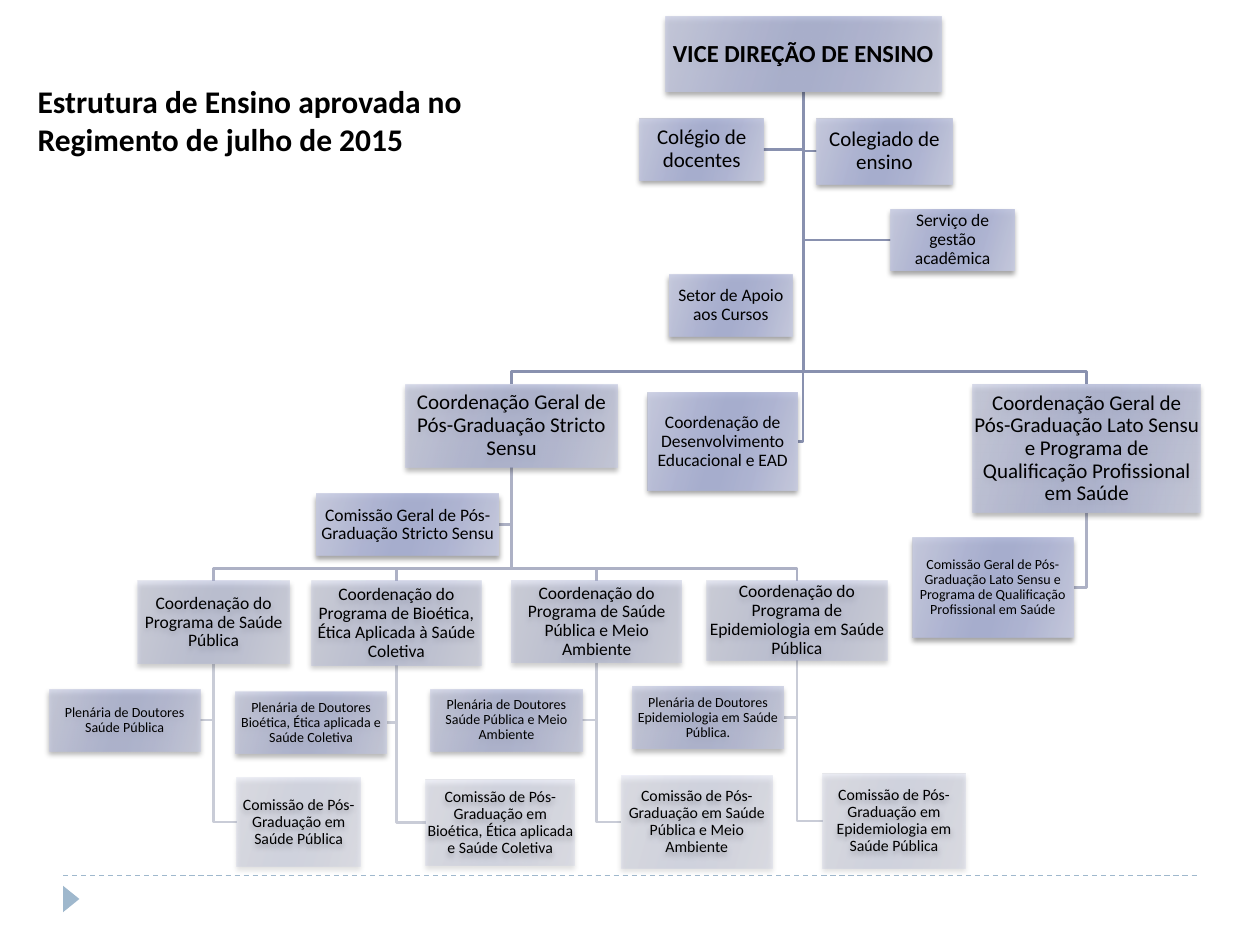
from dataclasses import dataclass
from lxml import etree
from pptx import Presentation, util as u
from pptx.dml.color import RGBColor
from pptx.enum import dml, shapes, text
from pptx.oxml.ns import qn


@dataclass(frozen=True)
class Role:
    opacity: int
    size: int
    link: str = ""  # colour of the lines to the units below
    bold: bool = False
    below: bool = False  # hangs from its parent by the top edge


class Theme:
    font, ink, accent = "Calibri", "000000", "9FB8CD"
    title_size = 18
    gradient = [(0, "C9CDE2"), (30, "B1B7D7"), (45, "A8B0D3"),
                (55, "A8B0D3"), (73, "B1B7D7"), (100, "C9CDE2")]
    root = Role(80, 14, link="8991AF", bold=True)
    general = Role(70, 12, link="ADB1C5", below=True)
    program = Role(50, 10, link="C9CCD7", below=True)
    plenary = Role(70, 8)
    committee = Role(30, 9)
    council = Role(90, 12)
    staff = Role(90, 10)
    small_staff = Role(90, 8)


@dataclass
class Unit:
    name: str
    role: Role
    at: tuple
    parent: "Unit" = None

    @property
    def center_x(self):
        return self.at[0] + self.at[2] / 2


class Chart:
    def __init__(self, slide, theme):
        self.s, self.theme = slide, theme

    def set_text(self, sp, words, size, bold):
        tf = sp.text_frame
        tf.word_wrap = True
        p = tf.paragraphs[0]
        p.text = words
        p.font.name, p.font.size, p.font.bold = self.theme.font, u.Pt(size), bold
        p.font.color.rgb = RGBColor.from_string(self.theme.ink)
        return tf, p

    def title(self, words, at):
        sp = self.s.shapes.add_textbox(*map(u.Inches, at))
        self.set_text(sp, words, self.theme.title_size, True)

    def divider(self, x1, x2, y):
        line = self.s.shapes.add_connector(
            shapes.MSO_CONNECTOR.STRAIGHT, *map(u.Inches, (x1, y, x2, y)))
        line.line.color.rgb = RGBColor.from_string(self.theme.accent)
        line.line.width = u.Pt(0.75)
        line.line.dash_style = dml.MSO_LINE.DASH
        etree.SubElement(line._element.spPr, qn("a:effectLst"))

    def marker(self, at):
        sp = self.s.shapes.add_shape(
            shapes.MSO_SHAPE.ISOSCELES_TRIANGLE, *map(u.Inches, at))
        sp.rotation = 90
        sp.fill.solid()
        sp.fill.fore_color.rgb = RGBColor.from_string(self.theme.accent)
        sp.line.fill.background()
        sp.shadow.inherit = False

    def link(self, unit):
        """Draw the elbow from the parent's bottom to the unit's top or near side."""
        parent = unit.parent
        x, y = parent.center_x, parent.at[1] + parent.at[3]
        left, top, width, height = unit.at
        if unit.role.below:
            bend = top - 0.1
            points = [(x, bend), (unit.center_x, bend), (unit.center_x, top)]
        else:
            middle = top + height / 2
            side = left + width if unit.center_x < x else left
            points = [(x, middle), (side, middle)]
        elbow = self.s.shapes.build_freeform(u.Inches(x), u.Inches(y))
        elbow.add_line_segments(
            [(u.Inches(a), u.Inches(b)) for a, b in points], close=False)
        sp = elbow.convert_to_shape()
        sp.fill.background()
        sp.line.color.rgb = RGBColor.from_string(parent.role.link)
        sp.line.width = u.Pt(1.5)
        sp.shadow.inherit = False

    def box(self, unit):
        sp = self.s.shapes.add_shape(
            shapes.MSO_SHAPE.RECTANGLE, *map(u.Inches, unit.at))
        self.shade(sp, unit.role.opacity)
        sp.line.fill.background()
        self.cast_shadow(sp)
        tf, p = self.set_text(sp, unit.name, unit.role.size, unit.role.bold)
        tf.margin_left = tf.margin_right = u.Inches(0.01)
        tf.margin_top = tf.margin_bottom = u.Inches(0.01)
        tf.vertical_anchor = text.MSO_ANCHOR.MIDDLE
        p.alignment = text.PP_ALIGN.CENTER
        p.line_spacing = 0.9

    @staticmethod
    def color(parent, rgb, opacity):
        clr = etree.SubElement(parent, qn("a:srgbClr"), val=rgb)
        etree.SubElement(clr, qn("a:alpha"), val=str(opacity * 1000))

    def shade(self, sp, opacity):
        sp.fill.gradient()
        sp.fill.gradient_angle = 360 - 16
        stops = sp._element.spPr.find(".//" + qn("a:gsLst"))
        for stop in list(stops):
            stops.remove(stop)
        for pos, rgb in self.theme.gradient:
            stop = etree.SubElement(stops, qn("a:gs"), pos=str(pos * 1000))
            self.color(stop, rgb, opacity)

    def cast_shadow(self, sp):
        sp.shadow.inherit = False
        effects = sp._element.spPr.find(qn("a:effectLst"))
        shadow = etree.SubElement(
            effects, qn("a:outerShdw"), blurRad=str(u.Pt(3)), dist=str(u.Pt(2)),
            dir=str(90 * 60000), rotWithShape="0")
        self.color(shadow, self.theme.ink, 40)


def build_units(t):
    root = Unit("VICE DIREÇÃO DE ENSINO", t.root, (5.28, 0.13, 2.19, 0.6))
    stricto = Unit("Coordenação Geral de Pós-Graduação Stricto Sensu",
                   t.general, (3.22, 3.05, 1.68, 0.66), root)
    lato = Unit("Coordenação Geral de Pós-Graduação Lato Sensu e Programa de "
                "Qualificação Profissional em Saúde",
                t.general, (7.72, 3.05, 1.81, 1.02), root)
    units = [
        root, stricto, lato,
        Unit("Colégio de docentes", t.council, (5.08, 0.94, 0.98, 0.49), root),
        Unit("Colegiado de ensino", t.council, (6.48, 0.94, 1.08, 0.52), root),
        Unit("Serviço de gestão acadêmica", t.staff, (7.07, 1.66, 0.98, 0.49), root),
        Unit("Setor de Apoio aos Cursos", t.staff, (5.31, 2.18, 0.98, 0.49)),
        Unit("Coordenação de Desenvolvimento Educacional e EAD",
             t.staff, (5.14, 3.12, 1.19, 0.77), root),
        Unit("Comissão Geral de Pós-Graduação Stricto Sensu",
             t.staff, (2.51, 3.92, 1.45, 0.49), stricto),
        Unit("Comissão Geral de Pós-Graduação Lato Sensu e Programa de "
             "Qualificação Profissional em Saúde",
             t.small_staff, (7.24, 4.27, 1.28, 0.79), lato),
    ]
    # program, plenary and committee: subject as worded in each, then places
    programs = [
        ("de Saúde Pública", "Saúde Pública", "Saúde Pública",
         (1.09, 1.21, 0.66), (0.39, 5.47), (1.88, 6.17, 0.98, 0.71)),
        ("de Bioética, Ética Aplicada à Saúde Coletiva",
         "Bioética, Ética aplicada e Saúde Coletiva",
         "Bioética, Ética aplicada e Saúde Coletiva",
         (2.47, 1.35, 0.67), (1.87, 5.49), (3.38, 6.19, 1.18, 0.68)),
        ("de Saúde Pública e Meio Ambiente", "Saúde Pública e Meio Ambiente",
         "Saúde Pública e Meio Ambiente",
         (4.06, 1.35, 0.65), (3.42, 5.47), (4.93, 6.16, 1.2, 0.73)),
        ("de Epidemiologia em Saúde Pública", "Epidemiologia em Saúde Pública.",
         "Epidemiologia em Saúde Pública",
         (5.61, 1.43, 0.63), (5.02, 5.45), (6.53, 6.14, 1.13, 0.75)),
    ]
    for subject, doctors, board, (x, w, h), plenary_at, board_at in programs:
        program = Unit(f"Coordenação do Programa {subject}",
                       t.program, (x, 4.61, w, h), stricto)
        units += [
            program,
            Unit(f"Plenária de Doutores {doctors}",
                 t.plenary, (*plenary_at, 1.2, 0.49), program),
            Unit(f"Comissão de Pós-Graduação em {board}",
                 t.committee, board_at, program),
        ]
    return units


def main():
    prs = Presentation()
    prs.slide_width, prs.slide_height = u.Inches(10), u.Inches(7.5)
    chart = Chart(prs.slides.add_slide(prs.slide_layouts[6]), Theme)
    chart.divider(0.5, 9.5, 6.95)
    chart.marker((0.46, 7.07, 0.21, 0.13))
    units = build_units(Theme)
    for unit in units:
        if unit.parent:
            chart.link(unit)
    for unit in units:
        chart.box(unit)
    chart.title("Estrutura de Ensino aprovada no Regimento de julho de 2015",
                (0.2, 0.6, 4.09, 0.71))
    prs.save("out.pptx")


if __name__ == "__main__":
    main()
